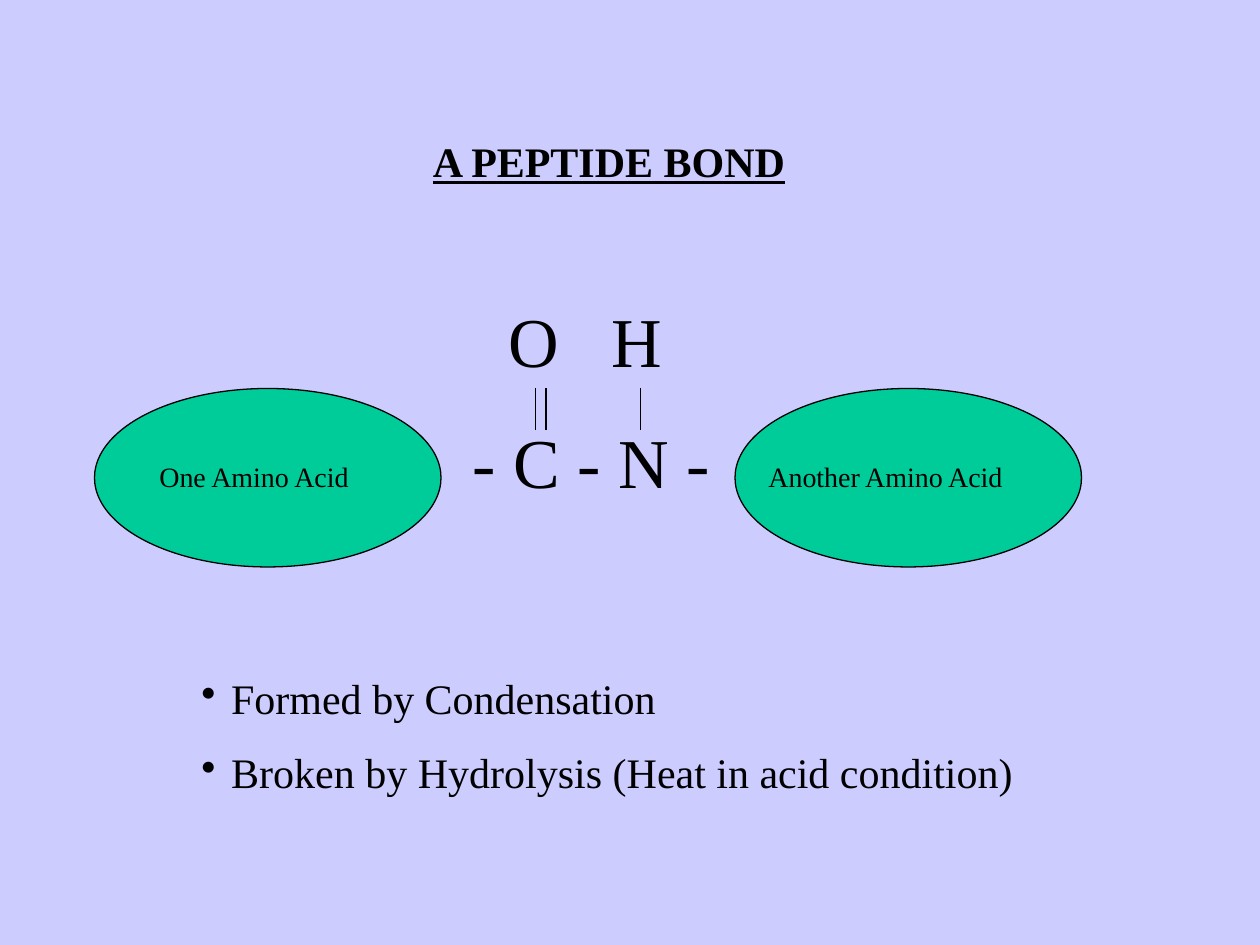
from dataclasses import dataclass

from lxml import etree
from pptx import Presentation
from pptx.dml.color import RGBColor
from pptx.enum.shapes import MSO_CONNECTOR, MSO_SHAPE
from pptx.enum.text import MSO_ANCHOR, PP_ALIGN
from pptx.oxml.ns import qn
from pptx.util import Pt

LEFT, CENTER = PP_ALIGN.LEFT, PP_ALIGN.CENTER
TOP, MIDDLE = MSO_ANCHOR.TOP, MSO_ANCHOR.MIDDLE
OVAL, STRAIGHT = MSO_SHAPE.OVAL, MSO_CONNECTOR.STRAIGHT


@dataclass(frozen=True)
class Theme:
    font: str = "Times New Roman"
    back: RGBColor = RGBColor(0xCC, 0xCC, 0xFF)
    acid: RGBColor = RGBColor(0x00, 0xCC, 0x99)
    ink: RGBColor = RGBColor(0, 0, 0)
    head: float = 24
    atom: float = 40
    label: float = 16
    body: float = 24
    line: float = 0.75


THEME = Theme()


def set_all(item, values):
    for name, value in values.items():
        setattr(item, name, value)


def write(shape, lines, size, align=LEFT, anchor=TOP, pad=(7.2, 3.6), **extra):
    """Fill a shape with one paragraph per line and return the paragraphs."""
    side, edge = map(Pt, pad)
    frame = shape.text_frame
    frame.text = "\n".join(lines)
    set_all(frame, {"word_wrap": True, "vertical_anchor": anchor,
                    "margin_left": side, "margin_right": side,
                    "margin_top": edge, "margin_bottom": edge})
    for para in frame.paragraphs:
        para.alignment = align
        for run in para.runs:
            set_all(run.font, {"name": THEME.font, "size": Pt(size), **extra})
            run.font.color.rgb = THEME.ink
    return frame.paragraphs


def add_text(slide, box, lines, size, **style):
    shape = slide.shapes.add_textbox(*map(Pt, box))
    return write(shape, lines, size, **style)


def add_title(slide, box, text):
    title = slide.shapes.title
    set_all(title, dict(zip(("left", "top", "width", "height"), map(Pt, box))))
    write(title, [text], THEME.head, align=CENTER, anchor=MIDDLE,
          bold=True, underline=True)


def add_bond(slide, x, top, end):
    bond = slide.shapes.add_connector(STRAIGHT, Pt(x), Pt(top), Pt(x), Pt(end))
    bond.line.color.rgb = THEME.ink
    bond.line.width = Pt(THEME.line)
    etree.SubElement(bond._element.spPr, qn("a:effectLst"))


def add_link(slide, box):
    """Draw the C - N chain with O and H bonded above it."""
    left, top, width, height = box
    row = 46
    base = top + height - row
    for text, x, y, wide in (("O", left + 37, top, 60),
                             ("H", left + 96, top, 60),
                             ("- C - N -", left, base, width)):
        add_text(slide, (x, y, wide, row), [text], THEME.atom,
                 align=CENTER, pad=(0, 0))
    for x in (68, 74, 128):
        add_bond(slide, left + x, top + 52, top + 76)


def add_acid(slide, box, name, inset, wide):
    left, top, width, height = box
    oval = slide.shapes.add_shape(OVAL, *map(Pt, box))
    oval.shadow.inherit = False
    oval.fill.solid()
    oval.fill.fore_color.rgb = THEME.acid
    oval.line.color.rgb = THEME.ink
    oval.line.width = Pt(THEME.line)
    add_text(slide, (left + inset, top + 37, wide, 27), [name], THEME.label)


def add_notes(slide, box, lines):
    """Write the bulleted facts below the diagram."""
    paras = add_text(slide, box, lines, THEME.body)
    for i, para in enumerate(paras):
        para.space_before = Pt(13.5 if i else 0)
        props = para._p.get_or_add_pPr()
        props.set("marL", str(Pt(17)))
        props.set("indent", str(-Pt(17)))
        etree.SubElement(props, qn("a:buChar"), char="•")


def main():
    deck = Presentation()
    deck.slide_width, deck.slide_height = Pt(720), Pt(540)
    slide = deck.slides.add_slide(deck.slide_layouts.get_by_name("Title Only"))
    slide.background.fill.solid()
    slide.background.fill.fore_color.rgb = THEME.back

    add_title(slide, (48, 72, 600, 40), "A PEPTIDE BOND")
    add_link(slide, (238, 170, 200, 115))
    add_acid(slide, (54, 222, 198, 102), "One Amino Acid", 30, 126)
    add_acid(slide, (420, 222, 198, 102), "Another Amino Acid", 12, 168)
    add_notes(slide, (108, 381, 516, 79),
              ["Formed by Condensation",
               "Broken by Hydrolysis (Heat in acid condition)"])
    deck.save("out.pptx")


if __name__ == "__main__":
    main()
